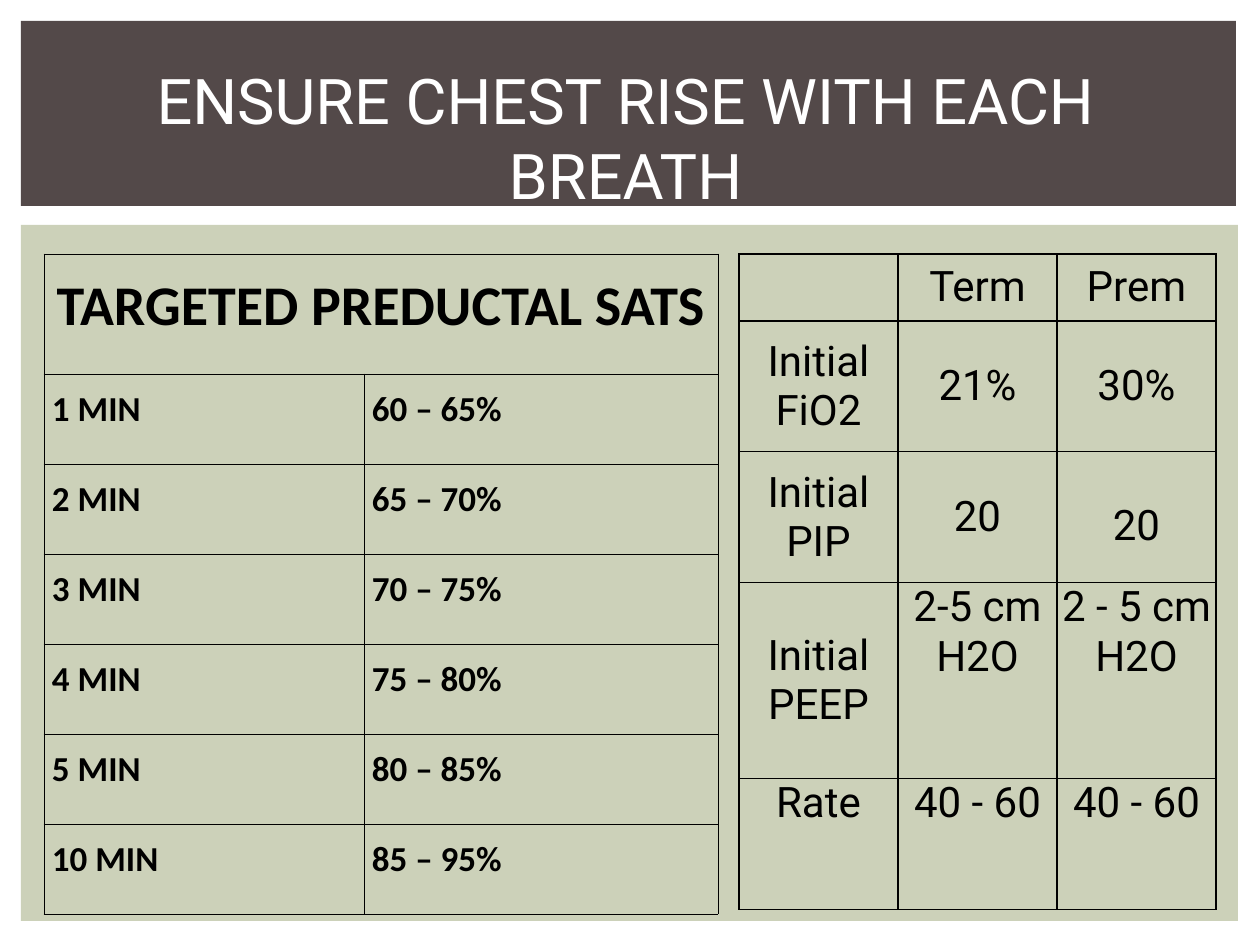
from dataclasses import dataclass

from lxml.etree import SubElement
from pptx import Presentation
from pptx.dml.color import RGBColor
from pptx.enum.shapes import MSO_SHAPE as Shape
from pptx.enum.text import MSO_ANCHOR as Anchor, MSO_AUTO_SIZE as AutoSize, PP_ALIGN as Align
from pptx.oxml.ns import qn
from pptx.util import Emu, Pt


@dataclass(frozen=True)
class Theme:
    panel: str = "CCD1B9"
    banner: str = "534949"
    title: str = "FFFFFF"
    ink: str = "000000"
    sans: str = "Roboto"
    table_sans: str = "Calibri"
    title_size: int = 36
    heading_size: int = 32
    settings_size: int = 24
    target_size: int = 20


THEME = Theme()
TARGETS = [
    ("1 MIN", "60 – 65%"),
    ("2 MIN", "65 – 70%"),
    ("3 MIN", "70 – 75%"),
    ("4 MIN", "75 – 80%"),
    ("5 MIN", "80 – 85%"),
    ("10 MIN", "85 – 95%"),
]
SETTINGS = [
    ("", "Term", "Prem"),
    ("Initial FiO2", "21%", "30%"),
    ("Initial PIP", "20", "20"),
    ("Initial PEEP", "2-5 cm H2O", "2 - 5 cm H2O"),
    ("Rate", "40 - 60", "40 - 60"),
]
TOP_CELLS = {(3, 1), (3, 2), (4, 0), (4, 1), (4, 2)}


def px(length):
    return Emu(round(length * 914400 / 126))


def style_text(frame, font, size, color, align, bold=False, spacing=1.0):
    for para in frame.paragraphs:
        para.alignment = align
        para.line_spacing = spacing
        for span in para.runs:
            span.font.name = font
            span.font.size = Pt(size)
            span.font.bold = bold
            span.font.color.rgb = RGBColor.from_string(color)


def add_block(page, box, color):
    block = page.shapes.add_shape(Shape.RECTANGLE, *map(px, box))
    block.shadow.inherit = False
    block.fill.solid()
    block.fill.fore_color.rgb = RGBColor.from_string(color)
    block.line.fill.background()


def add_banner(page, box):
    left, top, width, height = box
    add_block(page, box, THEME.banner)
    title = page.shapes.title
    title.left, title.top = px(left + 4), px(top + 34)
    title.width, title.height = px(width - 14), px(90)
    frame = title.text_frame
    frame.text = "ENSURE CHEST RISE WITH EACH BREATH"
    frame.word_wrap = True
    frame.auto_size = AutoSize.NONE
    frame.vertical_anchor = Anchor.TOP
    style_text(frame, THEME.sans, THEME.title_size, THEME.title, Align.CENTER)
    title.element.getparent().append(title.element)


def outline_cell(cell, width):
    properties = cell._tc.get_or_add_tcPr()
    for position, side in enumerate(("a:lnL", "a:lnR", "a:lnT", "a:lnB")):
        line = properties.makeelement(qn(side), {"w": str(Pt(width))})
        fill = SubElement(line, qn("a:solidFill"))
        SubElement(fill, qn("a:srgbClr"), val=THEME.ink)
        properties.insert(position, line)


def add_grid(page, left, top, columns, rows, margin, line_width):
    box = (left, top, sum(columns), sum(rows))
    table = page.shapes.add_table(len(rows), len(columns), *map(px, box)).table
    table.first_row = table.horz_banding = False
    for column, width in zip(table.columns, columns):
        column.width = px(width)
    for row, height in zip(table.rows, rows):
        row.height = px(height)
    for cell in table.iter_cells():
        cell.fill.background()
        cell.margin_left = cell.margin_right = px(margin)
        cell.margin_top = cell.margin_bottom = px(margin)
        outline_cell(cell, line_width)
    return table


def add_targets(page, left, top):
    rows = [120] + [90] * len(TARGETS)
    table = add_grid(page, left, top, [320, 354], rows, 8, 0.5)
    heading = table.cell(0, 0)
    heading.merge(table.cell(0, 1))
    heading.text = "TARGETED PREDUCTAL SATS"
    style_text(heading.text_frame, THEME.table_sans, THEME.heading_size, THEME.ink,
               Align.CENTER, True, 1.15)
    for row, values in enumerate(TARGETS, start=1):
        for column, value in enumerate(values):
            cell = table.cell(row, column)
            cell.text = value
            style_text(cell.text_frame, THEME.table_sans, THEME.target_size, THEME.ink,
                       Align.LEFT, True, 1.15)


def add_settings(page, left, top):
    table = add_grid(page, left, top, [159] * 3, [67, 131, 131, 196, 131], 0, 0.75)
    for row, values in enumerate(SETTINGS):
        for column, value in enumerate(values):
            cell = table.cell(row, column)
            cell.text = value
            cell.vertical_anchor = Anchor.TOP if (row, column) in TOP_CELLS else Anchor.MIDDLE
            style_text(cell.text_frame, THEME.sans, THEME.settings_size, THEME.ink, Align.CENTER)
    table.cell(2, 2).margin_top = px(18)


def add_panel(page, box):
    left, top = box[:2]
    add_block(page, box, THEME.panel)
    add_targets(page, left + 23, top + 29)
    add_settings(page, left + 718, top + 29)


def main():
    deck = Presentation()
    deck.slide_width, deck.slide_height = px(1260), px(945)
    page = deck.slides.add_slide(deck.slide_layouts[5])
    add_panel(page, (21, 225, 1217, 696))
    add_banner(page, (21, 21, 1215, 185))
    deck.save("out.pptx")


if __name__ == "__main__":
    main()
